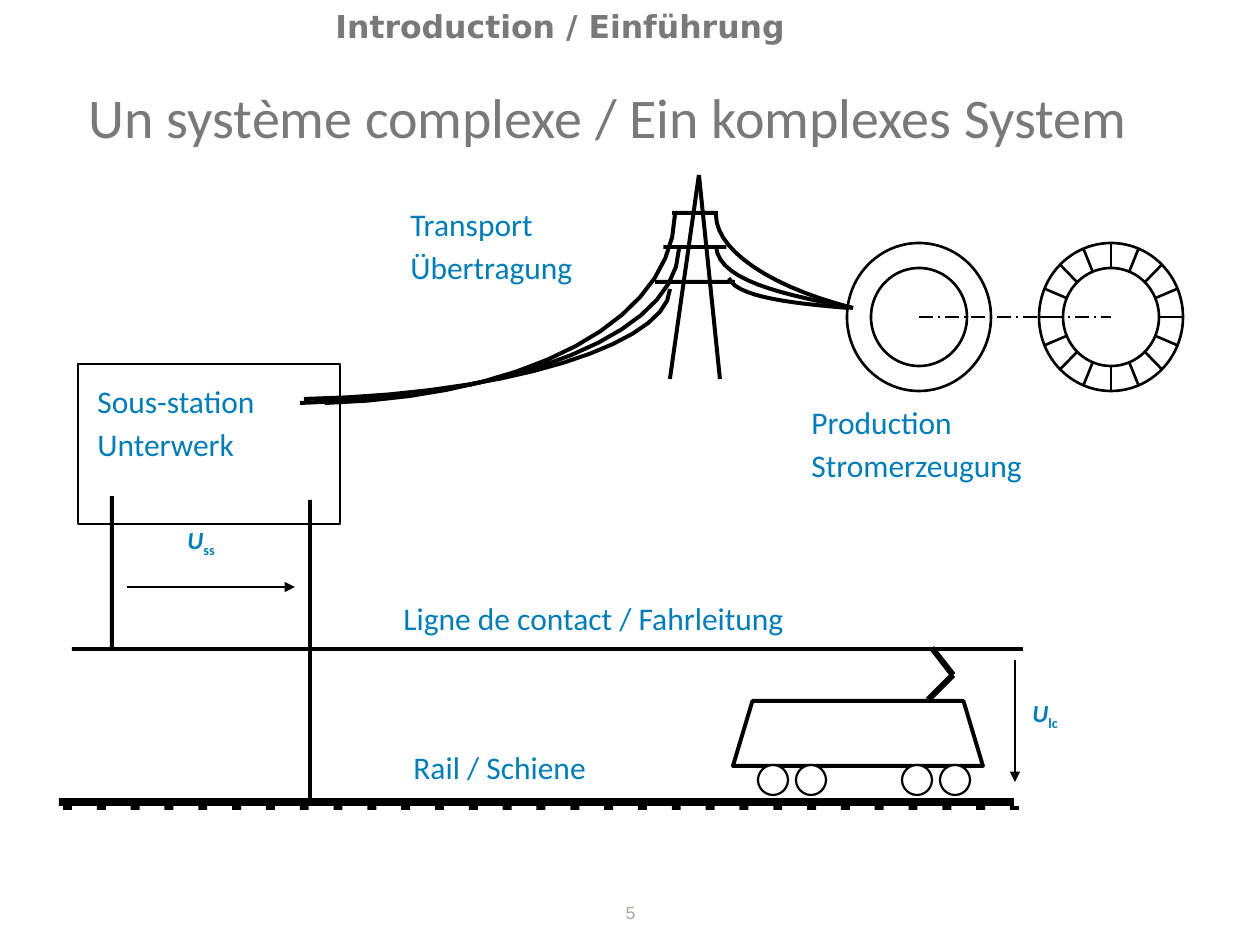
"""Build the slide showing a railway power system from production to the train."""
from itertools import pairwise
from math import cos, hypot, pi, sin

from lxml.etree import SubElement
from pptx import Presentation
from pptx.dml.color import RGBColor
from pptx.enum.dml import MSO_LINE
from pptx.enum.shapes import MSO_CONNECTOR, MSO_SHAPE
from pptx.enum.text import PP_ALIGN
from pptx.oxml.ns import qn
from pptx.util import Emu, Pt

THEME = {
    "ink": RGBColor(0, 0, 0), "paper": RGBColor(255, 255, 255),
    "heading": RGBColor(0x79, 0x79, 0x79), "label": RGBColor(0, 0x7C, 0xB7),
    "number": RGBColor(0xAC, 0xA3, 0x9A),
    "title_size": 32, "label_size": 18, "voltage_size": 14, "number_size": 10,
    "generator_line": 1.5, "frame_line": 1.25, "body_line": 2.25,
    "axis_line": 1, "arrow_line": 0.75,
}
SCALE = 914400 / 126

HEADER = ("Introduction / Einführung", (323, 1, 621, 77))
TITLE = ("Un système complexe / Ein komplexes System", (63, 76, 1090, 69))
PAGE_NUMBER = ("5", (591, 896, 79, 39))
LABELS = [
    (["Production", "Stromerzeugung"], (799, 391, 360, 147)),
    (["Transport", "Übertragung"], (398, 193, 265, 122)),
    (["Sous-station", "Unterwerk"], (85, 370, 265, 122)),
    (["Ligne de contact / Fahrleitung"], (391, 587, 601, 98)),
    (["Rail / Schiene"], (401, 736, 282, 98)),
]
VOLTAGES = [
    {"symbol": "U", "index": "ss", "box": (175, 514, 96, 73), "arrow": [(127, 587), (295, 587)]},
    {"symbol": "U", "index": "lc", "box": (1020, 687, 96, 73), "arrow": [(1015, 660), (1015, 782)]},
]

GENERATOR = {"stator": (919, 317), "rotor": (1111, 317),
             "outer": (72, 74), "inner": (48, 49), "diameters": 8}
PYLON = {"apex": (699, 175), "feet": [(670, 379), (720, 379)], "leg_width": 4,
         "arm_centre": 695, "arm_thickness": 4, "arms": [(211, 46), (245, 63), (280, 80)]}
WIRE_WIDTH, WIRE_STEPS = 4, 14
WIRES_TO_SUBSTATION = [
    [(670, 289), (668, 343), (510, 395), (304, 399)],
    [(679, 249), (676, 333), (520, 397), (300, 403)],
    [(675, 215), (672, 320), (530, 397), (325, 403)],
]
WIRES_TO_PRODUCTION = [
    [(716, 215), (716, 250), (770, 287), (853, 308)],
    [(716, 246), (718, 280), (780, 294), (853, 308)],
    [(729, 278), (736, 298), (800, 304), (849, 308)],
]
SUBSTATION = (78, 364, 262, 160)
FEEDERS = [(110, 496, 4, 155), (308, 500, 4, 306)]
CONTACT_LINE = (72, 647, 951, 4)
RAIL = (59, 798, 955, 8)
SLEEPERS = {"first": 63, "last": 1010, "count": 29, "top": 806, "size": (9, 4)}
LOCOMOTIVE = {"body": (733, 701, 250, 65), "slope": 0.3,
              "pantograph": [(928, 700), (953, 675), (932, 648)], "pantograph_width": 6,
              "bogies": [792, 936], "wheel_offset": 19, "wheel_y": 780, "wheel_radius": 15}


def px(value):
    return Emu(round(value * SCALE))


def bezier(start, bend_out, bend_in, end):
    """Return evenly stepped points along a cubic curve."""
    points = []
    for step in range(WIRE_STEPS + 1):
        t = step / WIRE_STEPS
        weights = ((1 - t) ** 3, 3 * t * (1 - t) ** 2, 3 * t * t * (1 - t), t ** 3)
        controls = zip(start, bend_out, bend_in, end)
        points.append(tuple(sum(w * c for w, c in zip(weights, axis)) for axis in controls))
    return points


def add_text(slide, lines, box, size, color, font="Calibri", bold=False, italic=False,
             align=PP_ALIGN.LEFT, spacing=None, subscript=None):
    frame = slide.shapes.add_textbox(*map(px, box)).text_frame
    frame.word_wrap = True
    for index, line in enumerate(lines):
        paragraph = frame.paragraphs[0] if index == 0 else frame.add_paragraph()
        paragraph.alignment, paragraph.line_spacing = align, spacing
        for part in filter(None, (line, subscript)):
            run = paragraph.add_run()
            run.text = part
            run.font.name, run.font.size = font, Pt(size)
            run.font.bold, run.font.italic = bold, italic and part == line
            run.font.color.rgb = color
            if part == subscript:
                run.font._element.set("baseline", "-25000")


def paint(figure, fill, line_width=None):
    figure.shadow.inherit = False
    figure.fill.solid()
    figure.fill.fore_color.rgb = fill
    if line_width:
        figure.line.color.rgb = THEME["ink"]
        figure.line.width = Pt(line_width)
    else:
        figure.line.fill.background()


def add_figure(slide, kind, box, fill=THEME["paper"], line_width=None):
    figure = slide.shapes.add_shape(kind, *map(px, box))
    paint(figure, fill, line_width)
    return figure


def add_bar(slide, box):
    add_figure(slide, MSO_SHAPE.RECTANGLE, box, THEME["ink"])


def add_circle(slide, centre, radii, line_width):
    (x, y), (rx, ry) = centre, radii
    add_figure(slide, MSO_SHAPE.OVAL, (x - rx, y - ry, 2 * rx, 2 * ry), line_width=line_width)


def add_band(slide, centreline, width):
    """Draw a filled strip of constant width along a centreline."""
    left, right = [], []
    neighbours = zip([centreline[0], *centreline], centreline, [*centreline[1:], centreline[-1]])
    for before, (x, y), after in neighbours:
        dx, dy = after[0] - before[0], after[1] - before[1]
        half = width / 2 / hypot(dx, dy)
        left.append((px(x - dy * half), px(y + dx * half)))
        right.append((px(x + dy * half), px(y - dx * half)))
    first, *rest = left + right[::-1]
    strip = slide.shapes.build_freeform(*first, scale=1.0)
    strip.add_line_segments(rest, close=True)
    paint(strip.convert_to_shape(), THEME["ink"])


def add_line(slide, start, end, width, dash=None, arrow=False):
    line = slide.shapes.add_connector(MSO_CONNECTOR.STRAIGHT, *map(px, (*start, *end)))
    line.line.color.rgb = THEME["ink"]
    line.line.width = Pt(width)
    if dash:
        line.line.dash_style = dash
    properties = line._element.spPr
    if arrow:
        SubElement(properties.get_or_add_ln(), qn("a:tailEnd"), type="triangle")
    SubElement(properties, qn("a:effectLst"))


def draw_generator(slide):
    stator, rotor = GENERATOR["stator"], GENERATOR["rotor"]
    outer, inner = GENERATOR["outer"], GENERATOR["inner"]
    width = THEME["generator_line"]
    add_circle(slide, stator, outer, width)
    add_circle(slide, stator, inner, width)
    add_circle(slide, rotor, outer, width)
    for step in range(GENERATOR["diameters"]):
        angle = step * pi / GENERATOR["diameters"]
        dx, dy = outer[0] * cos(angle), outer[1] * sin(angle)
        add_line(slide, (rotor[0] - dx, rotor[1] - dy), (rotor[0] + dx, rotor[1] + dy), width)
    add_circle(slide, rotor, inner, width)
    add_line(slide, stator, rotor, THEME["axis_line"], dash=MSO_LINE.LONG_DASH_DOT)


def draw_transmission(slide):
    add_figure(slide, MSO_SHAPE.RECTANGLE, SUBSTATION, line_width=THEME["frame_line"])
    for controls in WIRES_TO_SUBSTATION + WIRES_TO_PRODUCTION:
        add_band(slide, bezier(*controls), WIRE_WIDTH)
    for foot in PYLON["feet"]:
        add_band(slide, [foot, PYLON["apex"]], PYLON["leg_width"])
    for top, length in PYLON["arms"]:
        add_bar(slide, (PYLON["arm_centre"] - length / 2, top, length, PYLON["arm_thickness"]))


def draw_track(slide):
    for bar in [RAIL, CONTACT_LINE, *FEEDERS]:
        add_bar(slide, bar)
    pitch = (SLEEPERS["last"] - SLEEPERS["first"]) / (SLEEPERS["count"] - 1)
    for index in range(SLEEPERS["count"]):
        add_bar(slide, (SLEEPERS["first"] + index * pitch, SLEEPERS["top"], *SLEEPERS["size"]))


def draw_locomotive(slide):
    body = add_figure(slide, MSO_SHAPE.TRAPEZOID, LOCOMOTIVE["body"],
                      line_width=THEME["body_line"])
    body.adjustments[0] = LOCOMOTIVE["slope"]
    for arm in pairwise(LOCOMOTIVE["pantograph"]):
        add_band(slide, arm, LOCOMOTIVE["pantograph_width"])
    radius, offset = LOCOMOTIVE["wheel_radius"], LOCOMOTIVE["wheel_offset"]
    for bogie in LOCOMOTIVE["bogies"]:
        for x in (bogie - offset, bogie + offset):
            add_circle(slide, (x, LOCOMOTIVE["wheel_y"]), (radius, radius), THEME["frame_line"])


def write_texts(slide):
    header, box = HEADER
    add_text(slide, [header], box, THEME["label_size"], THEME["heading"], "DejaVu Sans", bold=True)
    title, box = TITLE
    add_text(slide, [title], box, THEME["title_size"], THEME["heading"], align=PP_ALIGN.CENTER)
    for lines, box in LABELS:
        add_text(slide, lines, box, THEME["label_size"], THEME["label"], spacing=1.15)
    for voltage in VOLTAGES:
        add_text(slide, [voltage["symbol"]], voltage["box"], THEME["voltage_size"], THEME["label"],
                 bold=True, italic=True, spacing=1.15, subscript=voltage["index"])
        add_line(slide, *voltage["arrow"], THEME["arrow_line"], arrow=True)
    number, box = PAGE_NUMBER
    add_text(slide, [number], box, THEME["number_size"], THEME["number"], "Arial",
             align=PP_ALIGN.CENTER)


def main():
    deck = Presentation()
    deck.slide_width, deck.slide_height = px(1260), px(945)
    slide = deck.slides.add_slide(deck.slide_layouts[6])
    for draw in (draw_generator, draw_transmission, draw_track, draw_locomotive, write_texts):
        draw(slide)
    deck.save("out.pptx")


if __name__ == "__main__":
    main()
